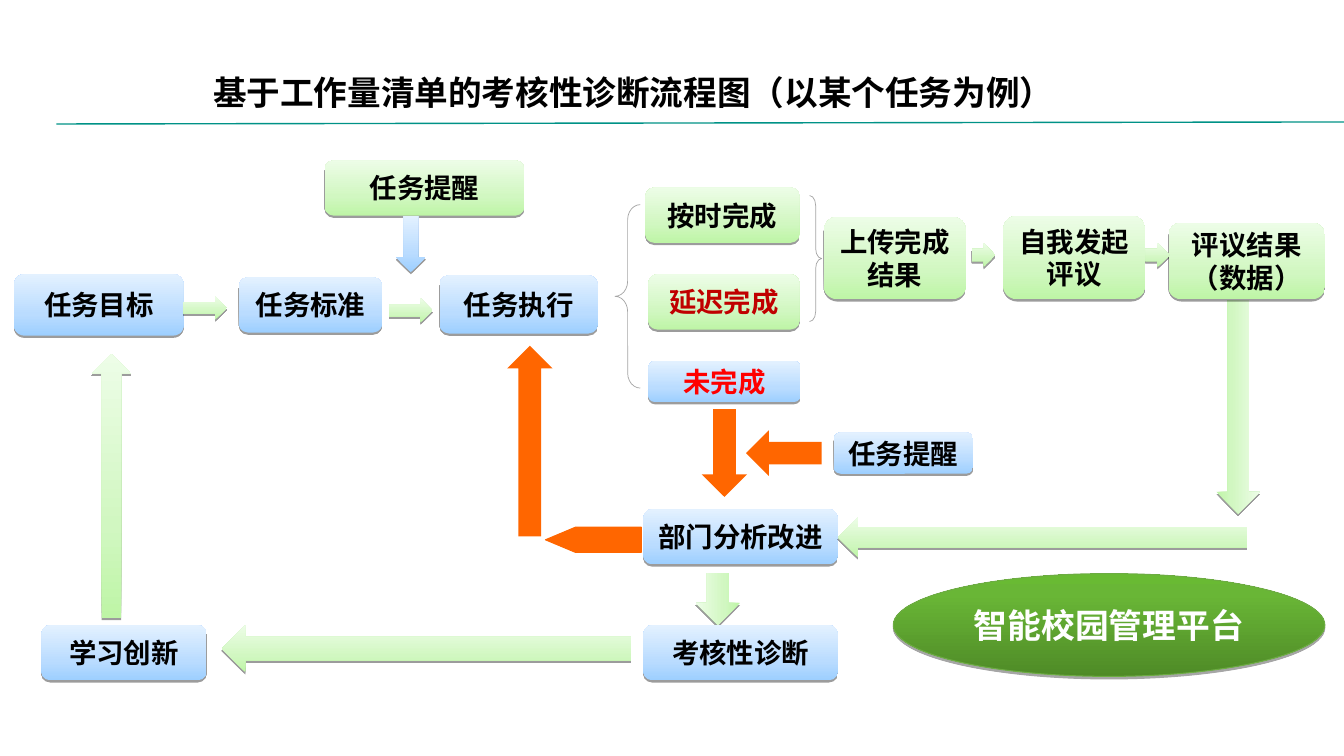
import copy
import dataclasses

import pptx
import pptx.dml.color
import pptx.enum.shapes
import pptx.enum.text
import pptx.oxml
import pptx.oxml.ns
import pptx.util

SHAPE = pptx.enum.shapes.MSO_SHAPE
EMU_PER_PX = 9144


@dataclasses.dataclass(frozen=True)
class Theme:
    """Colours, gradients, fonts and type sizes of the slide."""

    blue: tuple = ((0, "9DCFFF"), (35, "BADCFF"), (100, "E3F1FF"))
    green: tuple = ((0, "BEF5A6"), (35, "D1F7C1"), (100, "EDFDE7"))
    platform: tuple = ((0, "4F8B27"), (80, "69B636"), (100, "69BA33"))
    platform_edge: str = "6DAC43"
    orange: str = "FF6600"
    black: str = "000000"
    white: str = "FFFFFF"
    late: str = "C00000"
    missed: str = "FF0000"
    brace: str = "A5A5A5"
    rule: str = "009287"
    title_font: str = "Arial"
    label_font: str = "Noto Sans CJK SC"
    title_size: float = 24
    label_size: float = 19.6
    platform_size: float = 24.1


THEME = Theme()

BOXES = [
    ((14, 272, 168, 61), THEME.blue, "任务目标", THEME.black),
    ((237, 275, 142, 55), THEME.blue, "任务标准", THEME.black),
    ((436, 273, 157, 58), THEME.blue, "任务执行", THEME.black),
    ((643, 358, 151, 41), THEME.blue, "未完成", THEME.missed),
    ((638, 505, 193, 55), THEME.blue, "部门分析改进", THEME.black),
    ((638, 620, 193, 55), THEME.blue, "考核性诊断", THEME.black),
    ((41, 620, 164, 55), THEME.blue, "学习创新", THEME.black),
    ((827, 429, 138, 41), THEME.blue, "任务提醒", THEME.black),
    ((322, 159, 198, 55), THEME.green, "任务提醒", THEME.black),
    ((640, 186, 153, 55), THEME.green, "按时完成", THEME.black),
    ((643, 272, 150, 55), THEME.green, "延迟完成", THEME.late),
    ((817, 215, 141, 82), THEME.green, "上传完成结果", THEME.black),
    ((995, 214, 141, 83), THEME.green, "自我发起评议", THEME.black),
    ((1159, 221, 155, 76), THEME.green, "评议结果\n（数据）", THEME.black),
]

SOFT_ARROWS = [
    (SHAPE.LEFT_ARROW, (831, 513, 406, 40), THEME.green),
    (SHAPE.LEFT_ARROW, (220, 620, 406, 47), THEME.green),
    (SHAPE.DOWN_ARROW, (393, 214, 29, 56), THEME.blue),
    (SHAPE.UP_ARROW, (91, 351, 39, 262), THEME.green),
    (SHAPE.RIGHT_ARROW, (182, 294, 43, 23), THEME.green),
    (SHAPE.RIGHT_ARROW, (386, 296, 43, 24), THEME.green),
    (SHAPE.RIGHT_ARROW, (964, 241, 23, 24), THEME.green),
    (SHAPE.RIGHT_ARROW, (1136, 241, 24, 24), THEME.green),
]

TURNED_ARROWS = [
    (SHAPE.LEFT_ARROW, (1122, 382, 212, 43), 270),
    (SHAPE.RIGHT_ARROW, (686, 572, 52, 44), 90),
]

ORANGE_ARROWS = [
    ((503, 343, 45, 189), 0),
    ((696, 406, 45, 87), 180),
    ((755, 412, 45, 75), 270),
]

BRACES = [
    (SHAPE.RIGHT_BRACE, (803, 194, 12, 125), 0.83),
    (SHAPE.LEFT_BRACE, (610, 203, 25, 182), 0.6),
]


def px(length):
    """Turn a length in px into EMU."""
    return pptx.util.Emu(length * EMU_PER_PX)


def rgb(color):
    """Turn a hex string into a colour."""
    return pptx.dml.color.RGBColor.from_string(color)


def add_plain(page, kind, frame, rotation=0):
    """Add a preset shape without shadow, fill or line."""
    shape = page.shapes.add_shape(kind, *map(px, frame))
    shape.rotation = rotation
    shape.shadow.inherit = False
    shape.fill.background()
    shape.line.fill.background()
    return shape


def set_gradient(shape, stops):
    """Fill a shape with a three-stop gradient from bottom to top."""
    shape.fill.gradient()
    shape.fill.gradient_angle = 90
    stop_list = shape._element.spPr.find(".//" + pptx.oxml.ns.qn("a:gsLst"))
    stop_list.append(copy.deepcopy(stop_list[0]))
    for stop, (percent, color) in zip(shape.fill.gradient_stops, stops):
        stop.position = percent / 100
        stop.color.rgb = rgb(color)


def set_shadow(shape, alpha, distance):
    """Give a shape a hard shadow straight below it."""
    effects = shape._element.spPr.find(pptx.oxml.ns.qn("a:effectLst"))
    effects.append(pptx.oxml.parse_xml(
        f'<a:outerShdw {pptx.oxml.ns.nsdecls("a")} blurRad="0" dist="{pptx.util.Pt(distance)}" '
        f'dir="5400000" rotWithShape="0"><a:srgbClr val="{THEME.black}">'
        f'<a:alpha val="{alpha * 1000}"/></a:srgbClr></a:outerShdw>'))


def add_soft(page, kind, frame, stops, rotation=0, alpha=38, distance=1.6):
    """Add a shape with a gradient and a shadow."""
    shape = add_plain(page, kind, frame, rotation)
    set_gradient(shape, stops)
    set_shadow(shape, alpha, distance)
    return shape


def write(box, text, font_name, size, color, anchor):
    """Write bold centred paragraphs into a box."""
    frame = box.text_frame
    frame.word_wrap = True
    frame.vertical_anchor = anchor
    frame.text = text
    for para in frame.paragraphs:
        para.alignment = pptx.enum.text.PP_ALIGN.CENTER
        para.font.size = pptx.util.Pt(size)
        para.font.bold = True
        para.font.color.rgb = rgb(color)
        para.font.name = font_name
        east_asian = pptx.oxml.parse_xml(
            f'<a:ea {pptx.oxml.ns.nsdecls("a")} typeface="{font_name}"/>')
        para._p.pPr.find(pptx.oxml.ns.qn("a:defRPr")).append(east_asian)


def add_title(page):
    """Add the heading and the rule below it."""
    box = page.shapes.add_textbox(*map(px, (91, 66, 1074, 92)))
    write(box, "基于工作量清单的考核性诊断流程图（以某个任务为例）", THEME.title_font,
          THEME.title_size, THEME.black, pptx.enum.text.MSO_ANCHOR.TOP)
    rule = page.shapes.add_connector(
        pptx.enum.shapes.MSO_CONNECTOR.STRAIGHT, *map(px, (56, 123, 1336, 121)))
    rule.line.color.rgb = rgb(THEME.rule)
    rule.line.width = pptx.util.Pt(1)
    rule._element.spPr.append(
        pptx.oxml.parse_xml(f'<a:effectLst {pptx.oxml.ns.nsdecls("a")}/>'))


def add_box(page, frame, stops, text, color):
    """Add a rounded step box with its label."""
    box = add_soft(page, SHAPE.ROUNDED_RECTANGLE, frame, stops)
    write(box, text, THEME.label_font, THEME.label_size, color,
          pptx.enum.text.MSO_ANCHOR.MIDDLE)


def add_turned_arrow(page, kind, frame, rotation):
    """Add a green arrow that is flipped and turned to point down."""
    arrow = add_soft(page, kind, frame, THEME.green, rotation)
    arrow._element.spPr.xfrm.set("flipV", "1")


def add_orange(page, kind, frame, rotation):
    """Add a flat orange pointer."""
    pointer = add_plain(page, kind, frame, rotation)
    pointer.fill.solid()
    pointer.fill.fore_color.rgb = rgb(THEME.orange)
    return pointer


def set_line(shape, color, width):
    """Draw the outline of a shape."""
    shape.line.color.rgb = rgb(color)
    shape.line.width = pptx.util.Pt(width)


def add_brace(page, kind, frame, curve):
    """Add a thin grey brace."""
    brace = add_plain(page, kind, frame)
    brace.adjustments[0] = curve
    set_line(brace, THEME.brace, 0.5)


def add_platform(page):
    """Add the ellipse that names the platform."""
    ellipse = add_soft(page, SHAPE.OVAL, (886, 569, 428, 102), THEME.platform,
                       alpha=35, distance=1.8)
    set_line(ellipse, THEME.platform_edge, 0.75)
    write(ellipse, "智能校园管理平台", THEME.label_font, THEME.platform_size,
          THEME.white, pptx.enum.text.MSO_ANCHOR.MIDDLE)


def main():
    """Build the flow chart slide and save it."""
    deck = pptx.Presentation()
    deck.slide_width, deck.slide_height = px(1333), px(750)
    page = deck.slides.add_slide(deck.slide_layouts[6])
    add_title(page)
    for turned_arrow in TURNED_ARROWS:
        add_turned_arrow(page, *turned_arrow)
    for box in BOXES:
        add_box(page, *box)
    add_platform(page)
    for soft_arrow in SOFT_ARROWS:
        add_soft(page, *soft_arrow)
    pentagon = add_orange(page, SHAPE.PENTAGON, (541, 523, 95, 25), 180)
    pentagon.adjustments[0] = 1.19
    set_line(pentagon, THEME.orange, 0.75)
    for frame, rotation in ORANGE_ARROWS:
        add_orange(page, SHAPE.UP_ARROW, frame, rotation)
    for brace in BRACES:
        add_brace(page, *brace)
    deck.save("out.pptx")


if __name__ == "__main__":
    main()
